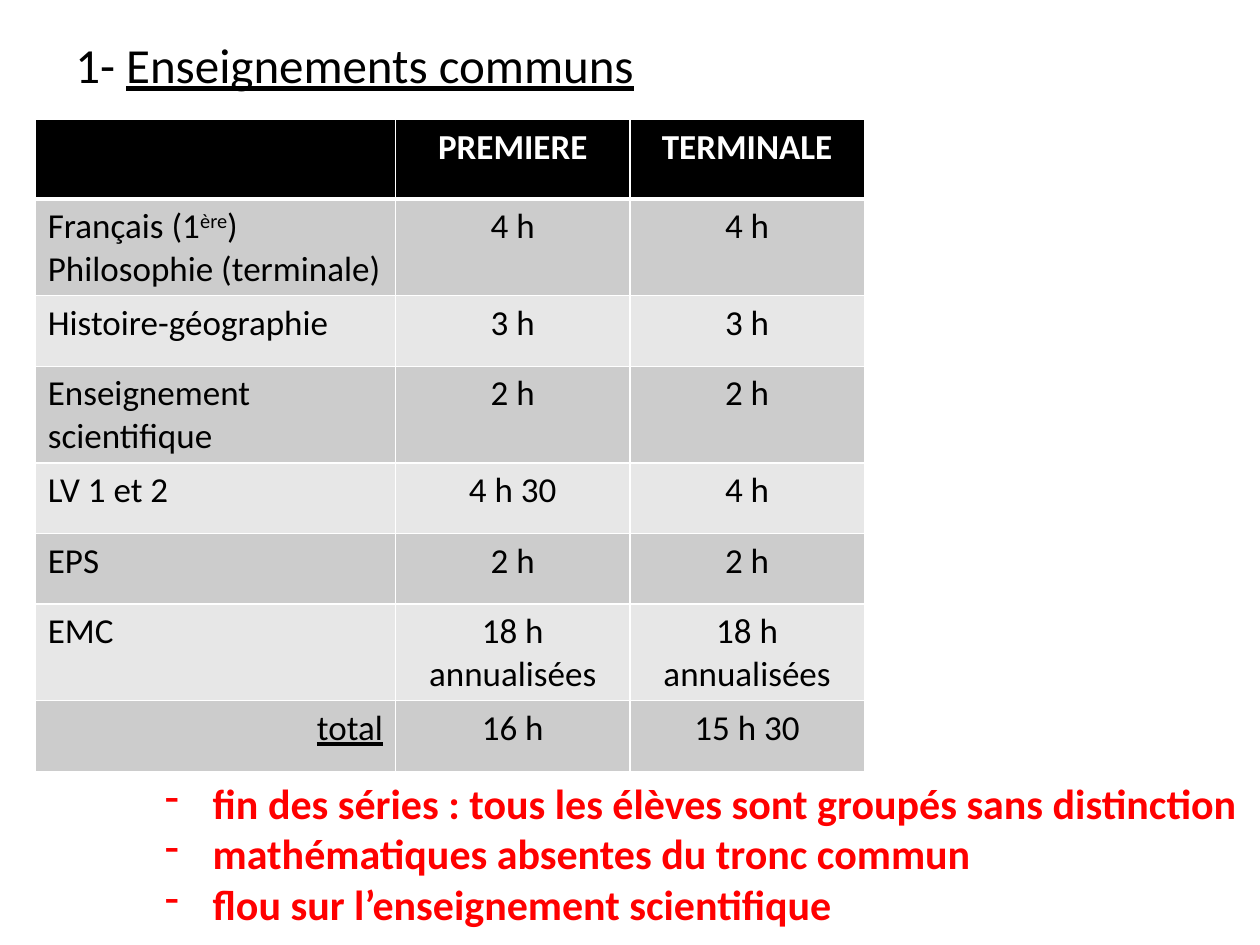
from lxml import etree
from pptx import Presentation
from pptx.dml.color import RGBColor
from pptx.enum.text import MSO_AUTO_SIZE, PP_ALIGN
from pptx.oxml.ns import qn
from pptx.util import Inches, Pt

LEFT, CENTER, RIGHT = PP_ALIGN.LEFT, PP_ALIGN.CENTER, PP_ALIGN.RIGHT
FIT_SHAPE = MSO_AUTO_SIZE.SHAPE_TO_FIT_TEXT
WIDTH, HEIGHT = Inches(10), Inches(7.5)
FONT = "Calibri"
COLORS = {
    "text": "000000",
    "header": "000000",
    "header_text": "FFFFFF",
    "odd_row": "CCCCCC",
    "even_row": "E7E7E7",
    "border": "FFFFFF",
    "remark": "FF0000",
}

SUBJECT_WIDTH, LEVEL_WIDTH = 2.86, 1.86
HEADER_HEIGHT, SINGLE_LINE, DOUBLE_LINE = 0.63, 0.56, 0.76
TIMETABLE = [
    (HEADER_HEIGHT, "", "PREMIERE", "TERMINALE"),
    (DOUBLE_LINE, "Français (1ère)\nPhilosophie (terminale)", "4 h", "4 h"),
    (SINGLE_LINE, "Histoire-géographie", "3 h", "3 h"),
    (DOUBLE_LINE, "Enseignement scientifique", "2 h", "2 h"),
    (SINGLE_LINE, "LV 1 et 2", "4 h 30", "4 h"),
    (SINGLE_LINE, "EPS", "2 h", "2 h"),
    (DOUBLE_LINE, "EMC", "18 h annualisées", "18 h annualisées"),
    (SINGLE_LINE, "total", "16 h", "15 h 30"),
]
REMARKS = [
    "fin des séries : tous les élèves sont groupés sans distinction",
    "mathématiques absentes du tronc commun",
    "flou sur l’enseignement scientifique",
]


def format_text(frame, size, color, bold=False, align=LEFT):
    for paragraph in frame.paragraphs:
        paragraph.alignment = align
        for run in paragraph.runs:
            run.font.name = FONT
            run.font.size = Pt(size)
            run.font.bold = bold
            run.font.color.rgb = RGBColor.from_string(COLORS[color])


def split_runs(paragraph, *parts):
    paragraph.text = ""
    for part in parts:
        paragraph.add_run().text = part
    return paragraph.runs


def add_text(slide, left, top, width, height, text):
    box = slide.shapes.add_textbox(
        round(left * WIDTH), round(top * HEIGHT), round(width * WIDTH), round(height * HEIGHT)
    )
    frame = box.text_frame
    frame.word_wrap = True
    frame.auto_size = FIT_SHAPE
    frame.text = text
    return frame


def add_title(slide):
    frame = add_text(slide, 0.05, 0.03, 0.92, 0.08, "")
    heading = split_runs(frame.paragraphs[0], "1- ", "Enseignements communs")[1]
    heading.font.underline = True
    format_text(frame, 28, "text")


def set_borders(cell, **widths):
    properties = cell._tc.get_or_add_tcPr()
    for position, side in enumerate("LRTB"):
        line = etree.Element(qn(f"a:ln{side}"), w=str(Pt(widths.get(side, 1))))
        fill = etree.SubElement(line, qn("a:solidFill"))
        etree.SubElement(fill, qn("a:srgbClr"), val=COLORS["border"])
        properties.insert(position, line)


def fill_cell(cell, text, row, column):
    header = row == 0
    band = "header" if header else "odd_row" if row % 2 else "even_row"
    cell.fill.solid()
    cell.fill.fore_color.rgb = RGBColor.from_string(COLORS[band])
    cell.text_frame.text = text
    if text.startswith("Français"):
        ordinal = split_runs(cell.text_frame.paragraphs[0], "Français (1", "ère", ")")[1]
        ordinal._r.get_or_add_rPr().set("baseline", "30000")
    align = CENTER if column else LEFT
    if text == "total":
        align = RIGHT
        cell.text_frame.paragraphs[0].runs[0].font.underline = True
    format_text(cell.text_frame, 20, "header_text" if header else "text", header, align)
    set_borders(cell, T=3 if row == 1 else 1, B=3 if header else 1)


def add_timetable(slide):
    widths = [SUBJECT_WIDTH, LEVEL_WIDTH, LEVEL_WIDTH]
    heights = [height for height, *_ in TIMETABLE]
    timetable = slide.shapes.add_table(
        len(heights), len(widths), Inches(0.28), Inches(0.95),
        Inches(sum(widths)), Inches(sum(heights)),
    ).table
    for column, width in zip(timetable.columns, widths):
        column.width = Inches(width)
    for row, (height, *texts) in enumerate(TIMETABLE):
        timetable.rows[row].height = Inches(height)
        for column, text in enumerate(texts):
            fill_cell(timetable.cell(row, column), text, row, column)


def add_remarks(slide):
    frame = add_text(slide, 0.121, 0.816, 0.881, 0.175, "\n".join(REMARKS))
    format_text(frame, 24, "remark", bold=True)
    indent = Inches(0.38)
    for paragraph in frame.paragraphs:
        properties = paragraph._p.get_or_add_pPr()
        properties.set("marL", str(indent))
        properties.set("indent", str(-indent))
        etree.SubElement(properties, qn("a:buFontTx"))
        etree.SubElement(properties, qn("a:buChar"), char="-")


def main():
    presentation = Presentation()
    presentation.slide_width, presentation.slide_height = WIDTH, HEIGHT
    slide = presentation.slides.add_slide(presentation.slide_layouts[6])
    add_title(slide)
    add_timetable(slide)
    add_remarks(slide)
    presentation.save("out.pptx")


if __name__ == "__main__":
    main()
